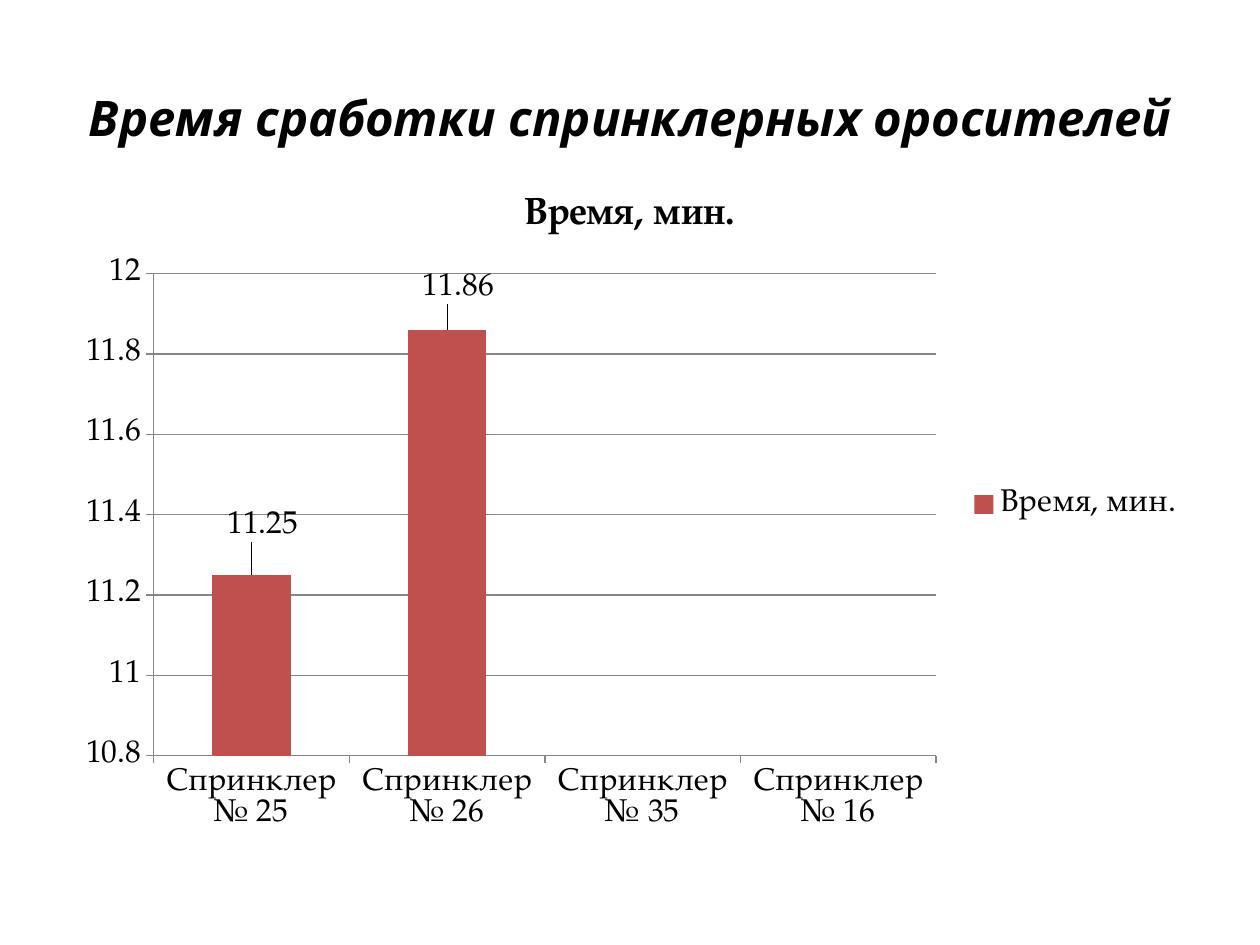
import pptx
import pptx.chart.data
import pptx.dml.color
import pptx.enum.chart
import pptx.enum.text
import pptx.oxml
import pptx.oxml.ns
import pptx.util
from pptx.util import Inches

COLORS = {"text": "000000", "bar": "C0504D", "line": "868686"}
CHART_FONT = "TeX Gyre Pagella"


def style_font(font, name, size, bold=False, italic=False):
    font.name = name
    font.size = pptx.util.Pt(size)
    font.bold = bold
    font.italic = italic
    font.color.rgb = pptx.dml.color.RGBColor.from_string(COLORS["text"])


def place(parent, index, **settings):
    for previous in parent.findall(pptx.oxml.ns.qn("c:layout")):
        parent.remove(previous)
    values = "".join(f'<c:{key} val="{value}"/>' for key, value in settings.items())
    layout = pptx.oxml.parse_xml(
        f'<c:layout {pptx.oxml.ns.nsdecls("c")}>'
        f"<c:manualLayout>{values}</c:manualLayout></c:layout>"
    )
    parent.insert(index, layout)


deck = pptx.Presentation()
deck.slide_width = Inches(10)
deck.slide_height = Inches(7.5)
page = deck.slides.add_slide(deck.slide_layouts[5])

title = page.shapes.title
title.left, title.top = Inches(0.5), Inches(0.3)
title.width, title.height = Inches(9), Inches(1.25)
title.text_frame.vertical_anchor = pptx.enum.text.MSO_ANCHOR.MIDDLE
para = title.text_frame.paragraphs[0]
para.alignment = pptx.enum.text.PP_ALIGN.CENTER
span = para.add_run()
span.text = "Время сработки спринклерных оросителей"
style_font(span.font, "Open Sans", 28, bold=True, italic=True)

data = pptx.chart.data.CategoryChartData()
data.categories = [f"Спринклер № {number}" for number in (25, 26, 35, 16)]
data.add_series("Время, мин.", (11.25, 11.86, None, None))
chart = page.shapes.add_chart(
    pptx.enum.chart.XL_CHART_TYPE.COLUMN_CLUSTERED,
    Inches(0.5), Inches(1.31), Inches(9), Inches(5.39), data,
).chart
style_font(chart.font, CHART_FONT, 18)

chart.has_title = True
span = chart.chart_title.text_frame.paragraphs[0].add_run()
span.text = "Время, мин."
style_font(span.font, CHART_FONT, 21.6, bold=True)
chart.chart_title.include_in_layout = False

chart.has_legend = True
chart.legend.position = pptx.enum.chart.XL_LEGEND_POSITION.RIGHT
chart.legend.include_in_layout = False

values = chart.value_axis
values.minimum_scale, values.maximum_scale, values.major_unit = 10.8, 12, 0.2
values.has_major_gridlines = True
values.tick_labels.number_format = "General"
values.tick_labels.number_format_is_linked = False
for axis in (chart.category_axis, values):
    axis.major_tick_mark = pptx.enum.chart.XL_TICK_MARK.OUTSIDE
for line in (chart.category_axis.format.line, values.format.line,
             values.major_gridlines.format.line):
    line.color.rgb = pptx.dml.color.RGBColor.from_string(COLORS["line"])
    line.width = pptx.util.Pt(0.75)

plot = chart.plots[0]
plot.gap_width = 150
plot.vary_by_categories = False
series = plot.series[0]
series.format.fill.solid()
series.format.fill.fore_color.rgb = pptx.dml.color.RGBColor.from_string(COLORS["bar"])
series.data_labels.show_value = True
for index, (shift_x, shift_y) in enumerate([(0.01, -0.04), (0.01, -0.03)]):
    label = series.points[index].data_label
    label.position = pptx.enum.chart.XL_LABEL_POSITION.OUTSIDE_END
    place(series.data_labels._element.findall(pptx.oxml.ns.qn("c:dLbl"))[index], 1,
          x=shift_x, y=shift_y)

place(chart._chartSpace.chart.plotArea, 0, layoutTarget="inner",
      xMode="edge", yMode="edge", x=0.08, y=0.16, w=0.69, h=0.71)

deck.save("out.pptx")
